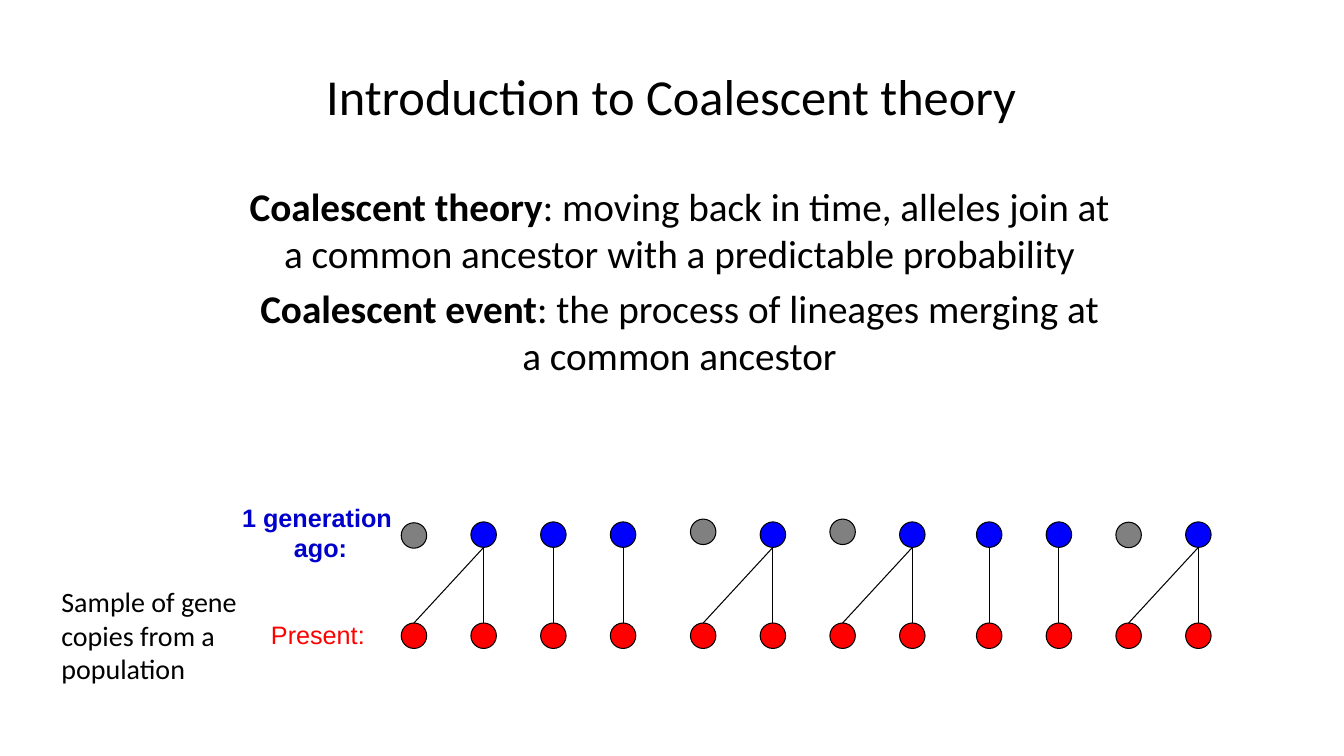
from dataclasses import dataclass
from lxml.etree import SubElement
from pptx import Presentation
from pptx.dml.color import RGBColor as RGB
from pptx.enum.shapes import MSO_CONNECTOR as Link, MSO_SHAPE as Kind
from pptx.enum.text import MSO_ANCHOR as Anchor, PP_ALIGN as Align
from pptx.oxml.ns import qn
from pptx.util import Pt

TITLE = "Introduction to Coalescent theory"
TERMS = [
    [("Coalescent theory", True),
     (": moving back in time, alleles join at a common ancestor "
      "with a predictable probability", False)],
    [("Coalescent event", True),
     (": the process of lineages merging at a common ancestor", False)],
]
SAMPLE = [[("Sample of gene copies from a population", False)]]
PRESENT = [[("Present:", False)]]
PAST = [[("1 generation ", True)], [("ago:", True)]]

# Column of the parent of each present gene copy
PARENTS = [1, 1, 2, 3, 5, 5, 7, 7, 8, 9, 11, 11]
# Gene copies without descendants: column and top
LOST = {0: 373.4, 4: 370.8, 6: 370.8, 10: 373}


@dataclass(frozen=True)
class Theme:
    black: RGB = RGB(0, 0, 0)
    red: RGB = RGB(255, 0, 0)
    blue: RGB = RGB(0, 0, 255)
    navy: RGB = RGB(0, 0, 204)
    grey: RGB = RGB(128, 128, 128)
    body: str = "Calibri"
    label: str = "Arial"
    head: int = 36
    term: int = 28
    note: int = 20
    tag: int = 18
    line: float = 0.75


LOOK = Theme()
DOT = 18.2
PITCH = 49.8
STARTS = (286.6, 493.2, 697.5)  # left of each block of four columns
PAST_TOP, NOW_TOP = 372.8, 445


def left(col):
    block, step = divmod(col, 4)
    return STARTS[block] + step * PITCH


def write(frame, paras, face, size, color, align=Align.LEFT, gap=0):
    for i, runs in enumerate(paras):
        para = frame.paragraphs[0] if i == 0 else frame.add_paragraph()
        para.alignment = align
        if i:
            para.space_before = Pt(gap)
        for text, bold in runs:
            run = para.add_run()
            run.text = text
            font = run.font
            font.name, font.size, font.bold = face, Pt(size), bold
            font.color.rgb = color


def add_text(slide, box, paras, face, size, color, wrap=True, **opts):
    frame = slide.shapes.add_textbox(*map(Pt, box)).text_frame
    frame.word_wrap = wrap
    write(frame, paras, face, size, color, **opts)


def add_dot(slide, col, top, color):
    dot = slide.shapes.add_shape(
        Kind.OVAL, Pt(left(col)), Pt(top), Pt(DOT), Pt(DOT))
    dot.shadow.inherit = False
    dot.fill.solid()
    dot.fill.fore_color.rgb = color
    dot.line.color.rgb = LOOK.black
    dot.line.width = Pt(LOOK.line)


def add_line(slide, child, parent):
    x1, x2 = (left(col) + DOT / 2 for col in (child, parent))
    line = slide.shapes.add_connector(
        Link.STRAIGHT, Pt(x1), Pt(NOW_TOP), Pt(x2), Pt(PAST_TOP + DOT))
    line.line.color.rgb = LOOK.black
    line.line.width = Pt(LOOK.line)
    SubElement(line._element.spPr, qn("a:effectLst"))


def add_title(slide):
    title = slide.shapes.title
    title.left, title.top, title.width, title.height = map(
        Pt, (173.5, 36, 612, 57.6))
    frame = title.text_frame
    frame.word_wrap = True
    frame.vertical_anchor = Anchor.BOTTOM
    write(frame, [[(TITLE, False)]], LOOK.body, LOOK.head, LOOK.black,
          Align.CENTER)
    frame.paragraphs[0].line_spacing = 0.9


def main():
    deck = Presentation()
    deck.slide_width, deck.slide_height = Pt(960), Pt(540)
    slide = deck.slides.add_slide(deck.slide_layouts[5])
    add_title(slide)
    add_text(slide, (169.2, 126.7, 632.2, 120.2), TERMS, LOOK.body,
             LOOK.term, LOOK.black, align=Align.CENTER, gap=5.6)
    add_text(slide, (36.7, 414, 140.4, 80), SAMPLE, LOOK.body,
             LOOK.note, LOOK.black)
    add_text(slide, (186.5, 438.5, 81.4, 28.8), PRESENT, LOOK.label,
             LOOK.tag, LOOK.red, wrap=False)
    add_text(slide, (165.6, 355, 126.7, 50.4), PAST, LOOK.label,
             LOOK.tag, LOOK.navy, wrap=False, align=Align.CENTER)
    for child, parent in enumerate(PARENTS):
        add_line(slide, child, parent)
        add_dot(slide, child, NOW_TOP, LOOK.red)
    for col in sorted(set(PARENTS)):
        add_dot(slide, col, PAST_TOP, LOOK.blue)
    for col, top in LOST.items():
        add_dot(slide, col, top, LOOK.grey)
    deck.save("out.pptx")


if __name__ == "__main__":
    main()
